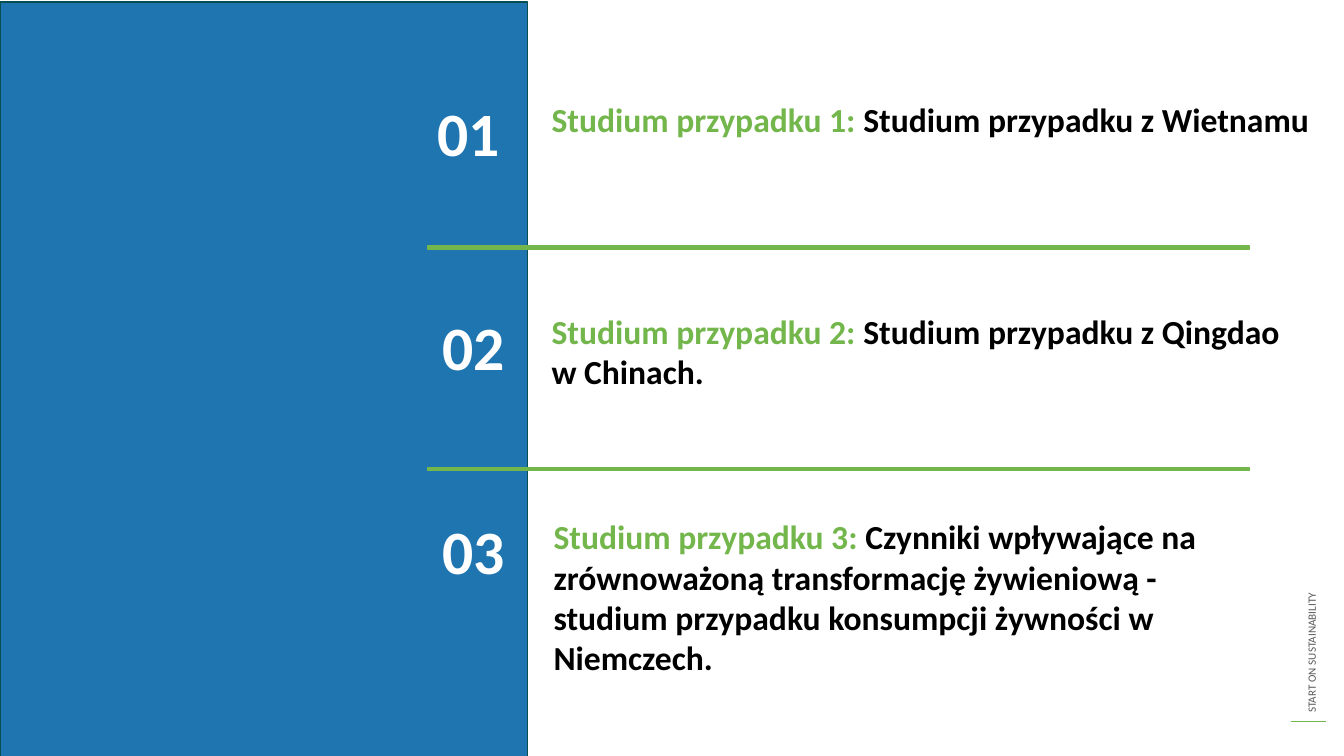
from pptx import Presentation
from pptx.dml.color import RGBColor
from pptx.enum.shapes import MSO_CONNECTOR as CONN, MSO_SHAPE as SHAPE
from pptx.enum.text import MSO_ANCHOR as ANCHOR, MSO_AUTO_SIZE as FIT
from pptx.oxml.ns import qn
from pptx.util import Inches, Pt

COLORS = {"blue": "1E75B0", "edge": "054F50", "green": "73B64B",
          "black": "000000", "white": "FFFFFF", "gray": "595959"}

# Number, number box (left, top), case box (left, top, width), case text
CASES = [
    ("01", (4.24, 0.67), (5.37, 0.93, 7.77), "Studium przypadku z Wietnamu"),
    ("02", (4.29, 2.8), (5.37, 3.03, 7.61),
     "Studium przypadku z Qingdao w Chinach."),
    ("03", (4.29, 4.82), (5.39, 5.07, 7.18),
     "Czynniki wpływające na zrównoważoną transformację żywieniową - "
     "studium przypadku konsumpcji żywności w Niemczech."),
]


def color(name):
    return RGBColor.from_string(COLORS[name])


def place(shape, left, top, width, height):
    shape.left, shape.top = Inches(left), Inches(top)
    shape.width, shape.height = Inches(width), Inches(height)


def write(shape, *parts, size=24, bold=True, wrap=True, spacing=1.0):
    """Fill a shape with one paragraph of (text, color) parts."""
    frame = shape.text_frame
    frame.word_wrap = wrap
    frame.auto_size = FIT.NONE
    frame.vertical_anchor = ANCHOR.TOP
    para = frame.paragraphs[0]
    para.line_spacing = spacing
    para.space_before = Pt(0)
    for text, name in parts:
        run = para.add_run()
        run.text = text
        run.font.name = "Calibri"
        run.font.size = Pt(size)
        run.font.bold = bold
        run.font.color.rgb = color(name)
    return para


def add_bar(slide, box, fill, line):
    bar = slide.shapes.add_shape(SHAPE.RECTANGLE, *map(Inches, box))
    bar.shadow.inherit = False
    bar.fill.solid()
    bar.fill.fore_color.rgb = color(fill)
    bar.line.color.rgb = color(line)
    bar.line.width = Pt(1)


def add_case(slide, holder, number, spot, box, text):
    # Case text without bullet or indent
    left, top, width = box
    place(holder, left, top, width, 0.37)
    para = write(holder, (f"Studium przypadku {int(number)}: ", "green"),
                 (text, "black"))
    props = para._p.get_or_add_pPr()
    props.set("marL", "0")
    props.set("indent", "0")
    props.append(props.makeelement(qn("a:buNone"), {}))

    # Number on the panel
    label = slide.shapes.add_textbox(*map(Inches, (*spot, 1.35, 1.05)))
    write(label, (number, "white"), size=44, spacing=1.3)


def add_footer(slide, left, top, width):
    # Upright motto, turned about the middle of its box
    motto = slide.shapes.add_textbox(*map(Inches, (10.78, 4.82, 4.46, 0.24)))
    motto.rotation = 270
    write(motto, ("START ON SUSTAINABILITY", "gray"), size=8, bold=False)

    # Short rule below it
    rule = slide.shapes.add_connector(
        CONN.STRAIGHT, *map(Inches, (left, top, left + width, top)))
    rule.line.color.rgb = color("green")
    rule.line.width = Pt(1)
    props = rule._element.spPr
    props.append(props.makeelement(qn("a:effectLst"), {}))


def main():
    deck = Presentation()
    deck.slide_width, deck.slide_height = Inches(13.33), Inches(7.5)
    slide = deck.slides.add_slide(deck.slide_layouts.get_by_name("Comparison"))

    # Three body placeholders hold the cases; the others go
    title, *holders, spare = slide.placeholders
    for extra in (title, spare):
        extra._element.getparent().remove(extra._element)

    add_footer(slide, 12.8, 7.16, 0.35)
    add_bar(slide, (0, 0.02, 5.23, 7.5), "blue", "edge")
    for holder, case in zip(holders, CASES):
        add_case(slide, holder, *case)

    # Dividers between the cases
    for top in (2.44, 4.64):
        add_bar(slide, (4.24, top, 8.15, 0.03), "green", "green")

    deck.save("out.pptx")


if __name__ == "__main__":
    main()
